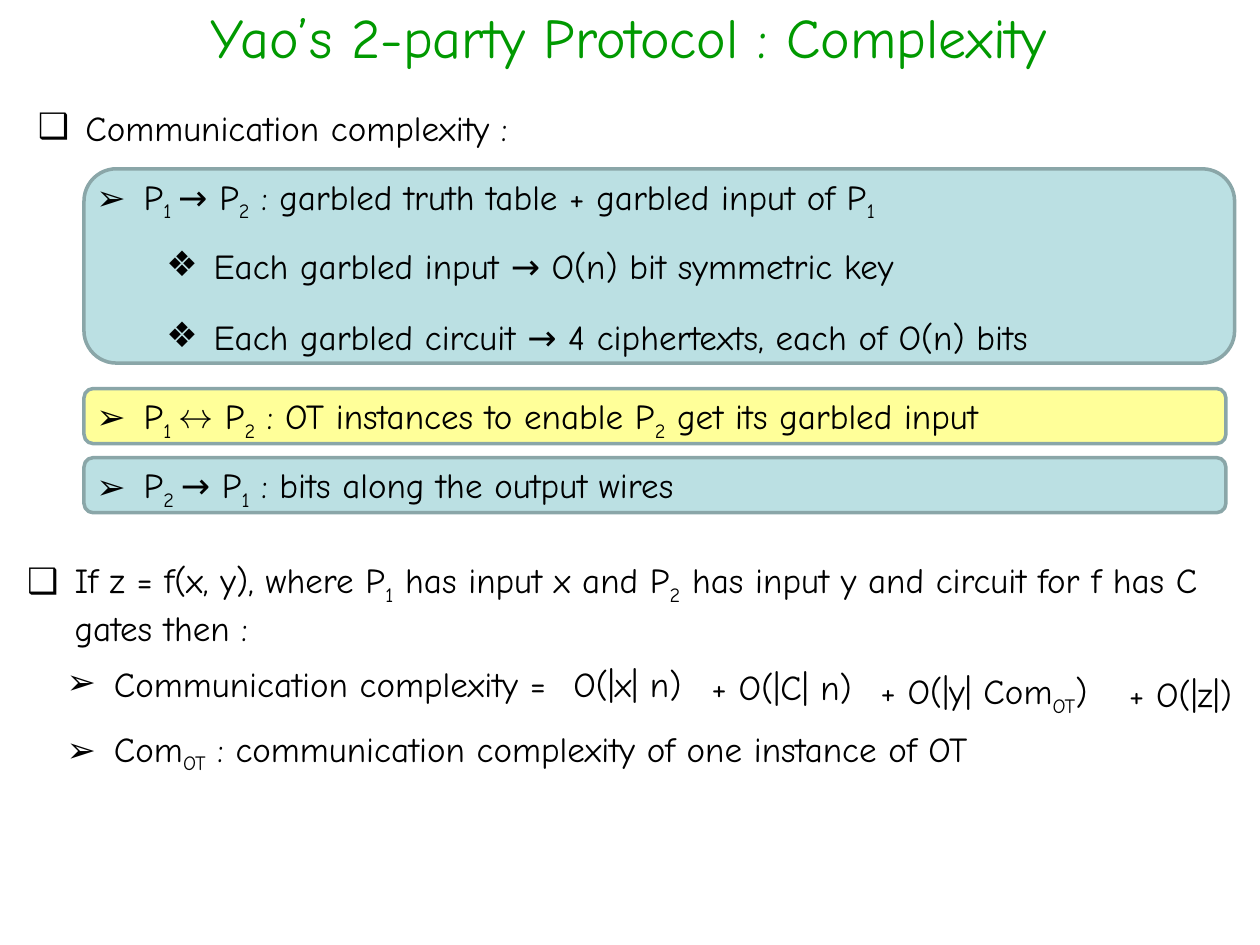
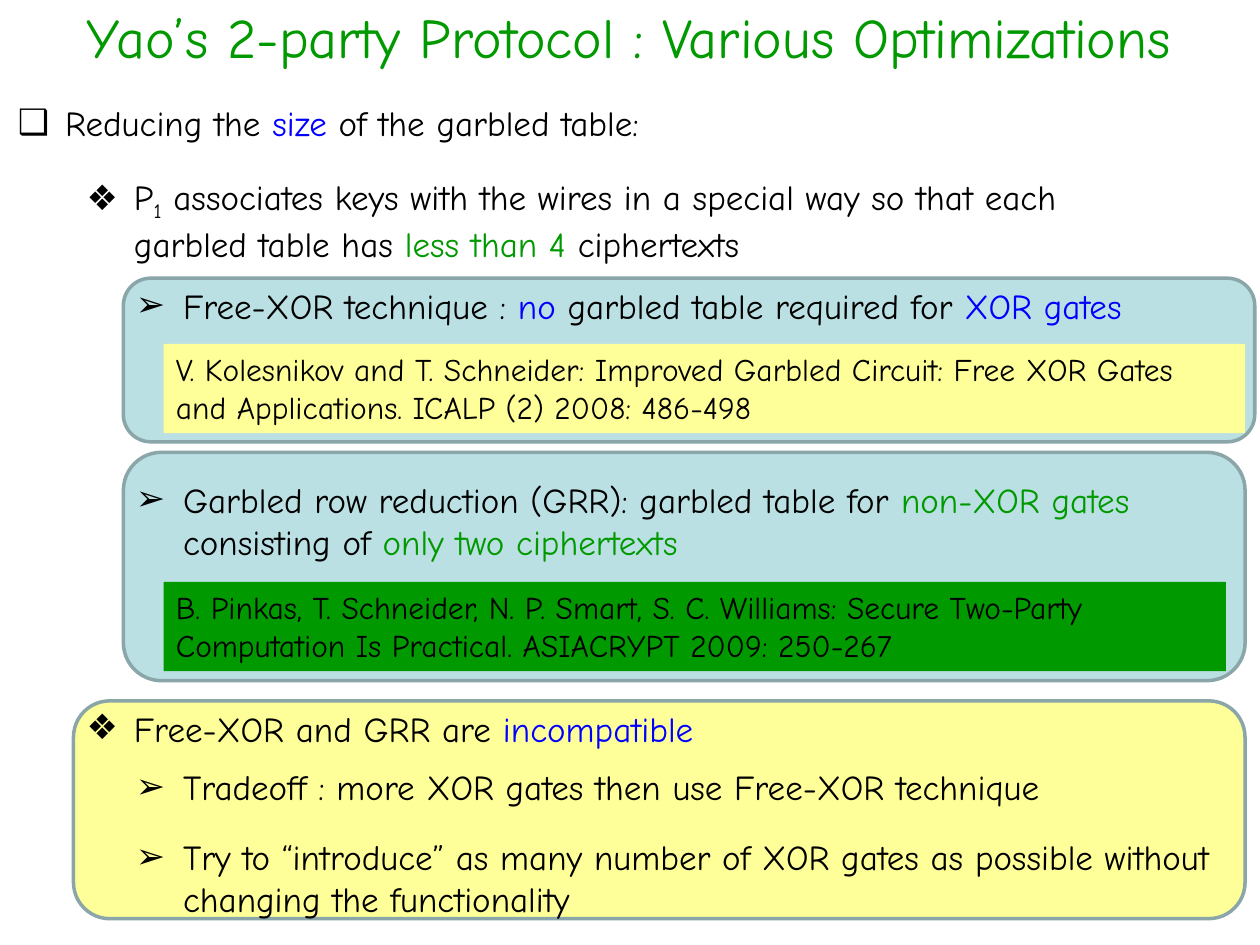
from typing import NamedTuple

from lxml.etree import SubElement
from pptx import Presentation
from pptx.dml.color import RGBColor
from pptx.enum.shapes import MSO_SHAPE
from pptx.enum.text import MSO_ANCHOR, MSO_AUTO_SIZE, PP_ALIGN
from pptx.oxml.ns import qn
from pptx.util import Pt

FONT = "Comic Neue"
COLOURS = {
    "black": "000000",
    "green": "009900",
    "blue": "0000FF",
    "teal": "BBE0E3",
    "yellow": "FFFF99",
    "outline": "8AA6A8",
}
SQUARE, ARROW, DIAMOND = "❑", "➢", "❖"
HANG = 27
ONE_LINE, TWO_LINES = 31.5, 55.5


class Box(NamedTuple):
    left: float
    top: float
    width: float
    height: float = ONE_LINE


class Run(NamedTuple):
    text: str
    colour: str = "black"
    sub: bool = False


class Item(NamedTuple):
    box: Box
    runs: list[Run]
    mark: str = ""


class Card(NamedTuple):
    box: Box
    fill: str


class Citation(NamedTuple):
    box: Box
    fill: str
    text: str


def rgb(name: str) -> RGBColor:
    return RGBColor.from_string(COLOURS[name])


def sub(text: str) -> Run:
    return Run(text, sub=True)


def blue(text: str) -> Run:
    return Run(text, "blue")


def green(text: str) -> Run:
    return Run(text, "green")


def place(sp, box: Box) -> None:
    for name, value in box._asdict().items():
        setattr(sp, name, Pt(value))


def set_bullet(p, mark: str) -> None:
    pPr = p._p.get_or_add_pPr()
    pPr.set("marL", str(Pt(HANG)))
    pPr.set("indent", str(-Pt(HANG)))
    SubElement(pPr, qn("a:buFont")).set("typeface", FONT)
    SubElement(pPr, qn("a:buChar")).set("char", mark)


def write(sp, runs: list[Run], size: float = 20, mark: str = "", **frame) -> None:
    """Fill a shape with one paragraph; frame overrides text frame settings."""
    tf = sp.text_frame
    settings = {
        "word_wrap": True,
        "auto_size": MSO_AUTO_SIZE.SHAPE_TO_FIT_TEXT,
        "vertical_anchor": MSO_ANCHOR.TOP,
    }
    for name, value in (settings | frame).items():
        setattr(tf, name, value)
    p = tf.paragraphs[0]
    p.space_before = Pt(0)
    if mark:
        set_bullet(p, mark)
    for run in runs:
        r = p.add_run()
        r.text = run.text
        for name, value in {"name": FONT, "size": Pt(size)}.items():
            setattr(r.font, name, value)
        r.font.color.rgb = rgb(run.colour)
        if run.sub:
            r._r.get_or_add_rPr().set("baseline", "-25000")


def add_item(shapes, item: Item) -> None:
    sp = shapes.add_textbox(*map(Pt, item.box))
    write(sp, item.runs, mark=item.mark)


def add_card(shapes, card: Card) -> None:
    sp = shapes.add_shape(MSO_SHAPE.ROUNDED_RECTANGLE, *map(Pt, card.box))
    sp.shadow.inherit = False
    sp.fill.solid()
    sp.fill.fore_color.rgb = rgb(card.fill)
    sp.line.color.rgb = rgb("outline")
    sp.line.width = Pt(2)


def add_citation(shapes, citation: Citation) -> None:
    sp = shapes.add_textbox(*map(Pt, citation.box))
    sp.fill.solid()
    sp.fill.fore_color.rgb = rgb(citation.fill)
    write(sp, [Run(citation.text)], size=18)


def add_banner(shapes, top: float, fill: str, runs: list[Run]) -> None:
    """Group a one-line card with the item written on it."""
    group = shapes.add_group_shape().shapes
    add_card(group, Card(Box(48, top, 652.5), fill))
    add_item(group, Item(Box(48, top, 663), runs, ARROW))


def add_slide(prs, title: str, lead: Item):
    slide = prs.slides.add_slide(prs.slide_layouts[1])
    sp = slide.shapes.title
    place(sp, Box(-14.5, -2, 748, 45.5))
    write(sp, [green(title)], size=32, auto_size=MSO_AUTO_SIZE.NONE,
          vertical_anchor=MSO_ANCHOR.MIDDLE)
    sp.text_frame.paragraphs[0].alignment = PP_ALIGN.CENTER
    body = slide.placeholders[1]
    place(body, lead.box)
    write(body, lead.runs, mark=lead.mark)
    return slide


def add_complexity_slide(prs) -> None:
    lead = Item(Box(14.5, 57, 697.5), [Run("Communication complexity :")], SQUARE)
    shapes = add_slide(prs, "Yao’s 2-party Protocol : Complexity", lead).shapes

    add_card(shapes, Card(Box(48, 96.5, 657.5, 111), "teal"))
    items = [
        Item(Box(48, 96.5, 663),
             [Run("P"), sub("1 "), Run("→ P"), sub("2"),
              Run(" : garbled truth table + garbled input of P"), sub("1")], ARROW),
        Item(Box(88, 136, 612),
             [Run("Each garbled input → O(n) bit symmetric key")], DIAMOND),
        Item(Box(88, 176.5, 612),
             [Run("Each garbled circuit → 4 ciphertexts, each of O(n) bits")], DIAMOND),
        Item(Box(8.5, 315.5, 697.5, TWO_LINES),
             [Run("If z = f(x, y), where P"), sub("1"), Run(" has input x and P"), sub("2"),
              Run(" has input y and circuit for f has C gates then :")], SQUARE),
        Item(Box(31, 375, 306), [Run("Communication complexity =")], ARROW),
        Item(Box(31, 412, 657.5),
             [Run("Com"), sub("OT"),
              Run(" : communication complexity of one instance of OT")], ARROW),
    ]
    for item in items:
        add_item(shapes, item)

    cost_terms = [
        (320.5, 90.5, [Run("O(|x| n)")]),
        (399.5, 108, [Run("+ O(|C| n)")]),
        (496, 178.5, [Run("+ O(|y| Com"), sub("OT"), Run(")")]),
        (638, 96.5, [Run("+ O(|z|)")]),
    ]
    for i, (left, width, runs) in enumerate(cost_terms):
        add_item(shapes, Item(Box(left, 375 + 2 * i, width), runs))

    add_banner(shapes, 261.5, "teal",
               [Run("P"), sub("2 "), Run("→ P"), sub("1"),
                Run(" : bits along the output wires")])
    add_banner(shapes, 222, "yellow",
               [Run("P"), sub("1 "), Run("↔ P"), sub("2"),
                Run(" : OT instances to enable P"), sub("2"),
                Run(" get its garbled input")])


def add_optimizations_slide(prs) -> None:
    lead = Item(Box(3, 54.5, 708.5),
                [Run("Reducing the "), blue("size"), Run(" of the garbled table:")], SQUARE)
    shapes = add_slide(prs, "Yao’s 2-party Protocol : Various Optimizations", lead).shapes

    cards = [
        Card(Box(42, 400.5, 669.5, 124.5), "yellow"),
        Card(Box(70.5, 258.5, 641, 130.5), "teal"),
        Card(Box(70.5, 159, 646.5, 93.5), "teal"),
    ]
    for card in cards:
        add_card(shapes, card)

    items = [
        Item(Box(42.5, 96.5, 612, TWO_LINES),
             [Run("P"), sub("1"),
              Run(" associates keys with the wires in a special way so that each "
                  "garbled table has "),
              green("less than 4 "), Run("ciphertexts")], DIAMOND),
        Item(Box(70.5, 159, 646.5),
             [Run("Free-XOR technique : "), blue("no "),
              Run("garbled table required for "), blue("XOR gates")], ARROW),
        Item(Box(70.5, 270, 646.5, TWO_LINES),
             [Run("Garbled row reduction (GRR): garbled table for "),
              green("non-XOR gates "), Run("consisting of "),
              green("only two ciphertexts")], ARROW),
        Item(Box(42.5, 400.5, 612),
             [Run("Free-XOR and GRR are "), blue("incompatible")], DIAMOND),
        Item(Box(70.5, 434, 646.5),
             [Run("Tradeoff : more XOR gates then use Free-XOR technique")], ARROW),
        Item(Box(70.5, 474, 646.5, TWO_LINES),
             [Run("Try to “introduce” as many number of XOR gates as possible "
                  "without changing the functionality")], ARROW),
    ]
    for item in items:
        add_item(shapes, item)

    citations = [
        Citation(Box(93.5, 196.5, 618, 51), "yellow",
                 "V. Kolesnikov and T. Schneider: Improved Garbled Circuit: Free XOR Gates "
                 "and Applications. ICALP (2) 2008: 486-498"),
        Citation(Box(93.5, 332.5, 607, 51), "green",
                 "B. Pinkas, T. Schneider, N. P. Smart, S. C. Williams: Secure Two-Party "
                 "Computation Is Practical. ASIACRYPT 2009: 250-267"),
    ]
    for citation in citations:
        add_citation(shapes, citation)


def main() -> None:
    prs = Presentation()
    prs.slide_width, prs.slide_height = Pt(720), Pt(540)
    add_complexity_slide(prs)
    add_optimizations_slide(prs)
    prs.save("out.pptx")


if __name__ == "__main__":
    main()
